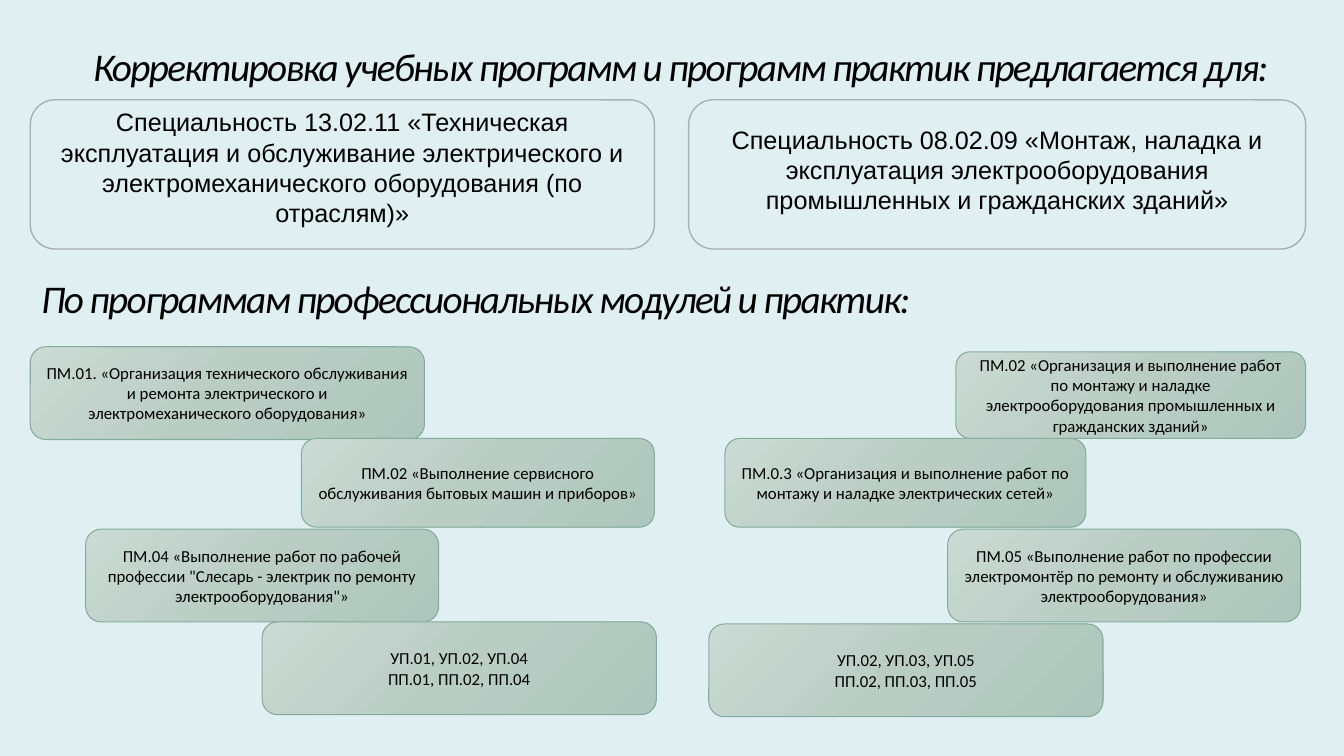
from copy import deepcopy

from pptx import Presentation
from pptx.dml.color import RGBColor
from pptx.enum.shapes import MSO_SHAPE as Preset
from pptx.enum.text import MSO_ANCHOR as Anchor, PP_ALIGN as Align
from pptx.oxml.ns import qn
from pptx.util import Inches, Pt

COLORS = {
    "background": "E0EFF1",
    "frame": "A6B1B2",
    "card_line": "84AC9D",
    "text": "000000",
}
CARD_GRADIENT = [(0, "CBDAD4"), (0.5, "B9CDC5"), (1, "AEC6BD")]

# Left, top, width, height of the frame; top and height of its text; text
SPECIALTIES = [
    (0.3, 0.99, 6.19, 1.48, 1.01, 1.31,
     "Специальность 13.02.11 «Техническая эксплуатация и обслуживание "
     "электрического и электромеханического оборудования (по отраслям)»"),
    (6.83, 0.99, 6.12, 1.48, 1.18, 1.01,
     "Специальность 08.02.09 «Монтаж, наладка и эксплуатация "
     "электрооборудования промышленных и гражданских зданий»"),
]

# Left, top, width, height, paragraphs
MODULES = [
    (0.3, 3.44, 3.91, 0.92,
     ["ПМ.01. «Организация технического обслуживания и ремонта "
      "электрического и электромеханического оборудования»"]),
    (2.99, 4.35, 3.5, 0.88,
     ["ПМ.02 «Выполнение сервисного обслуживания бытовых машин и приборов»"]),
    (0.85, 5.25, 3.5, 0.92,
     ["ПМ.04 «Выполнение работ по рабочей профессии "
      "\"Слесарь - электрик по ремонту электрооборудования\"»"]),
    (2.6, 6.17, 3.91, 0.92, ["УП.01, УП.02, УП.04", "ПП.01, ПП.02, ПП.04"]),
    (7.19, 4.35, 3.58, 0.88,
     ["ПМ.0.3 «Организация и выполнение работ по монтажу и наладке "
      "электрических сетей»"]),
    (9.48, 3.49, 3.47, 0.86,
     ["ПМ.02 «Организация и выполнение работ по монтажу и наладке "
      "электрооборудования промышленных и гражданских зданий»"]),
    (9.4, 5.25, 3.5, 0.92,
     ["ПМ.05 «Выполнение работ по профессии электромонтёр по ремонту "
      "и обслуживанию электрооборудования»"]),
    (7.03, 6.19, 3.91, 0.92, ["УП.02, УП.03, УП.05", "ПП.02, ПП.03, ПП.05"]),
]


def rgb(name):
    return RGBColor.from_string(COLORS[name])


class SlideBuilder:
    """Holds the slide and draws its kinds of elements."""

    def __init__(self, slide):
        self.slide = slide
        fill = slide.background.fill
        fill.solid()
        fill.fore_color.rgb = rgb("background")

    def set_text(self, shape, texts, size, font, align, anchor):
        frame = shape.text_frame
        frame.word_wrap = True
        frame.vertical_anchor = anchor
        frame.text = "\n".join(texts)
        for paragraph in frame.paragraphs:
            paragraph.alignment = align
            paragraph.font.size = Pt(size)
            paragraph.font.name = font
            paragraph.font.color.rgb = rgb("text")

    def text(self, left, top, width, height, text, size, font,
             align=Align.CENTER, anchor=Anchor.TOP):
        box = self.slide.shapes.add_textbox(
            Inches(left), Inches(top), Inches(width), Inches(height))
        self.set_text(box, [text], size, font, align, anchor)
        return box

    def heading(self, left, top, text, align):
        box = self.text(left, top, 12.4, 0.62, text, 28, "Calibri",
                        align, Anchor.BOTTOM)
        paragraph = box.text_frame.paragraphs[0]
        paragraph.line_spacing = 0.8
        paragraph.font.italic = True
        # Tightened letter spacing, in hundredths of a point
        paragraph.runs[0]._r.get_or_add_rPr().set("spc", "-120")

    def rounded(self, left, top, width, height, line, line_width):
        shape = self.slide.shapes.add_shape(
            Preset.ROUNDED_RECTANGLE,
            Inches(left), Inches(top), Inches(width), Inches(height))
        shape.shadow.inherit = False
        shape.line.color.rgb = rgb(line)
        shape.line.width = Pt(line_width)
        return shape

    def frame(self, left, top, width, height):
        shape = self.rounded(left, top, width, height, "frame", 1)
        shape.fill.solid()
        shape.fill.fore_color.rgb = rgb("background")

    def card(self, left, top, width, height, texts):
        shape = self.rounded(left, top, width, height, "card_line", 0.75)
        fill = shape.fill
        fill.gradient()
        fill.gradient_angle = 315
        # A new gradient has two stops; add the middle one
        stop_list = shape._element.spPr.find(".//" + qn("a:gsLst"))
        stop_list.insert(1, deepcopy(stop_list[0]))
        for stop, (position, color) in zip(fill.gradient_stops, CARD_GRADIENT):
            stop.position = position
            stop.color.rgb = RGBColor.from_string(color)
        self.set_text(shape, texts, 12, "Calibri", Align.CENTER, Anchor.MIDDLE)


def main():
    presentation = Presentation()
    presentation.slide_width = Inches(13.33)
    presentation.slide_height = Inches(7.5)
    slide = presentation.slides.add_slide(presentation.slide_layouts[6])
    builder = SlideBuilder(slide)

    # Specialties
    builder.heading(
        0.55, 0.31,
        "Корректировка учебных программ и программ практик предлагается для:",
        Align.CENTER)
    for left, top, width, height, text_top, text_height, text in SPECIALTIES:
        builder.frame(left, top, width, height)
        builder.text(left, text_top, width, text_height, text, 18, "Arial")

    # Professional modules and practical training
    builder.heading(
        0.31, 2.61, "По программам профессиональных модулей и практик:",
        Align.LEFT)
    for module in MODULES:
        builder.card(*module)

    presentation.save("out.pptx")


if __name__ == "__main__":
    main()
